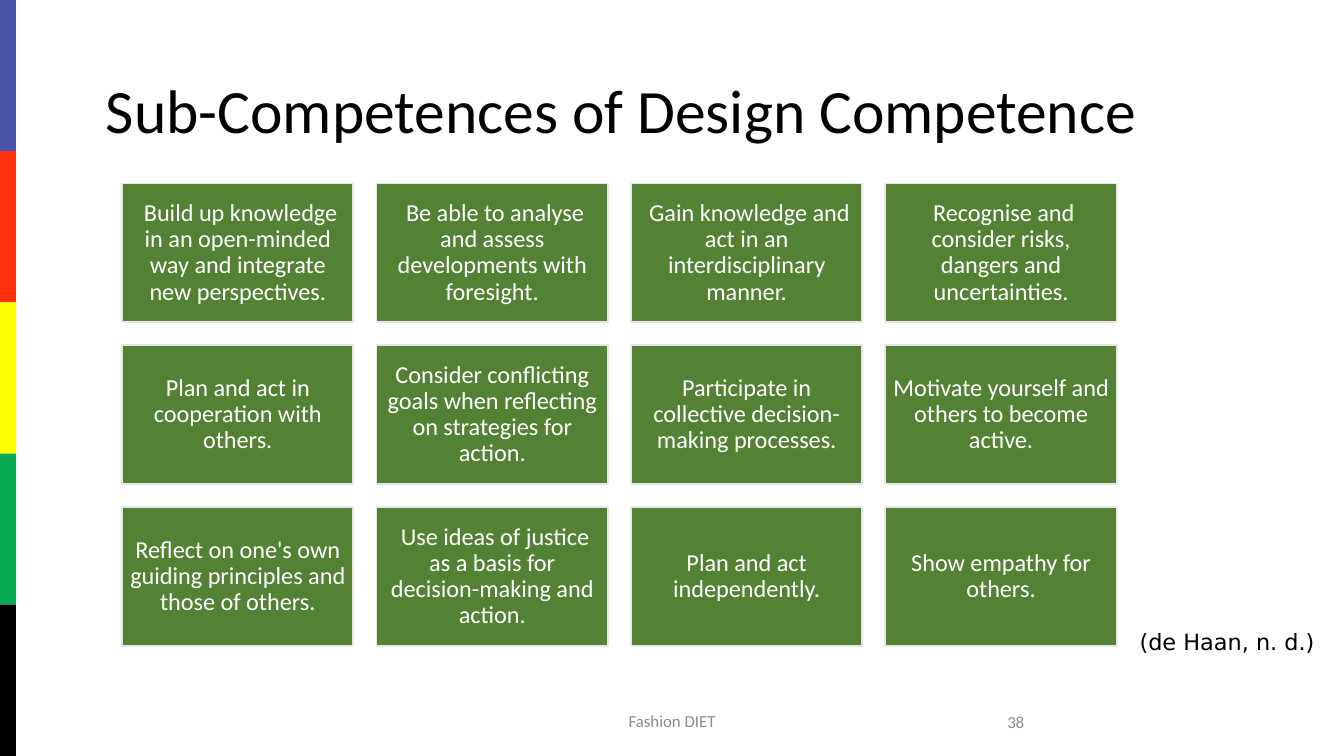
"""Build the slide on the sub-competences of design competence."""
from pptx import Presentation
from pptx.dml.color import RGBColor
from pptx.enum.shapes import MSO_SHAPE as Shape
from pptx.enum.text import MSO_ANCHOR as Anchor, MSO_AUTO_SIZE as AutoSize, PP_ALIGN as Align
from pptx.util import Pt


def paint(color_format, color):
    color_format.rgb = RGBColor.from_string(color)


def write(shape, text, size, color, align=Align.LEFT, font="Calibri", anchor=Anchor.MIDDLE):
    frame = shape.text_frame
    frame.text = text
    frame.word_wrap = True
    frame.vertical_anchor = anchor
    para = frame.paragraphs[0]
    para.alignment = align
    span = para.runs[0]
    span.font.name = font
    span.font.size = Pt(size)
    paint(span.font.color, color)
    return para


deck = Presentation()
deck.slide_width, deck.slide_height = Pt(720), Pt(405)
page = deck.slides.add_slide(deck.slide_layouts[5])

stripe_height = 81
for index, color in enumerate(["4952A4", "FC300D", "FFFB00", "0BAA54", "000000"]):
    stripe = page.shapes.add_shape(
        Shape.RECTANGLE, Pt(0), Pt(index * stripe_height), Pt(8.6), Pt(stripe_height))
    stripe.shadow.inherit = False
    stripe.fill.solid()
    paint(stripe.fill.fore_color, color)
    stripe.line.fill.background()

title = page.shapes.title
title.left, title.top, title.width, title.height = Pt(49.5), Pt(21.6), Pt(621), Pt(78.3)
para = write(title, "Sub-Competences of Design Competence", 33, "000000")
para.line_spacing = 0.9
title.text_frame.auto_size = AutoSize.NONE

footer = page.shapes.add_textbox(Pt(238.5), Pt(375.4), Pt(243), Pt(21.6))
write(footer, "Fashion DIET", 9, "8C8C8C", Align.CENTER)

page_number = page.shapes.add_textbox(Pt(393.8), Pt(375.8), Pt(162), Pt(21.6))
write(page_number, "38", 9, "8C8C8C", Align.RIGHT)

citation = page.shapes.add_textbox(Pt(603.4), Pt(332.8), Pt(118.8), Pt(21.6))
write(citation, "(de Haan, n. d.)", 12, "000000", font="DejaVu Sans", anchor=Anchor.TOP)
citation.text_frame.auto_size = AutoSize.SHAPE_TO_FIT_TEXT

competences = [
    [" Build up knowledge in an open-minded way and integrate new perspectives.",
     " Be able to analyse and assess developments with foresight.",
     " Gain knowledge and act in an interdisciplinary manner.",
     " Recognise and consider risks, dangers and uncertainties."],
    ["Plan and act in cooperation with others.",
     "Consider conflicting goals when reflecting on strategies for action.",
     "Participate in collective decision-making processes.",
     "Motivate yourself and others to become active."],
    ["Reflect on one's own guiding principles and those of others.",
     " Use ideas of justice as a basis for decision-making and action.",
     "Plan and act independently.",
     "Show empathy for others."],
]
grid_left, grid_top = 65.4, 98.3
card_width, card_height, gap = 123.9, 74.3, 12.4
for row, texts in enumerate(competences):
    for column, text in enumerate(texts):
        card = page.shapes.add_shape(
            Shape.RECTANGLE,
            Pt(grid_left + column * (card_width + gap)),
            Pt(grid_top + row * (card_height + gap)),
            Pt(card_width), Pt(card_height))
        card.shadow.inherit = False
        card.fill.solid()
        paint(card.fill.fore_color, "548235")
        paint(card.line.color, "E7E6E6")
        card.line.width = Pt(1)
        para = write(card, text, 13, "FFFFFF", Align.CENTER)
        para.line_spacing = 0.9
        frame = card.text_frame
        frame.margin_left = frame.margin_right = Pt(3.6)
        frame.margin_top = frame.margin_bottom = Pt(3.6)

deck.save("out.pptx")
